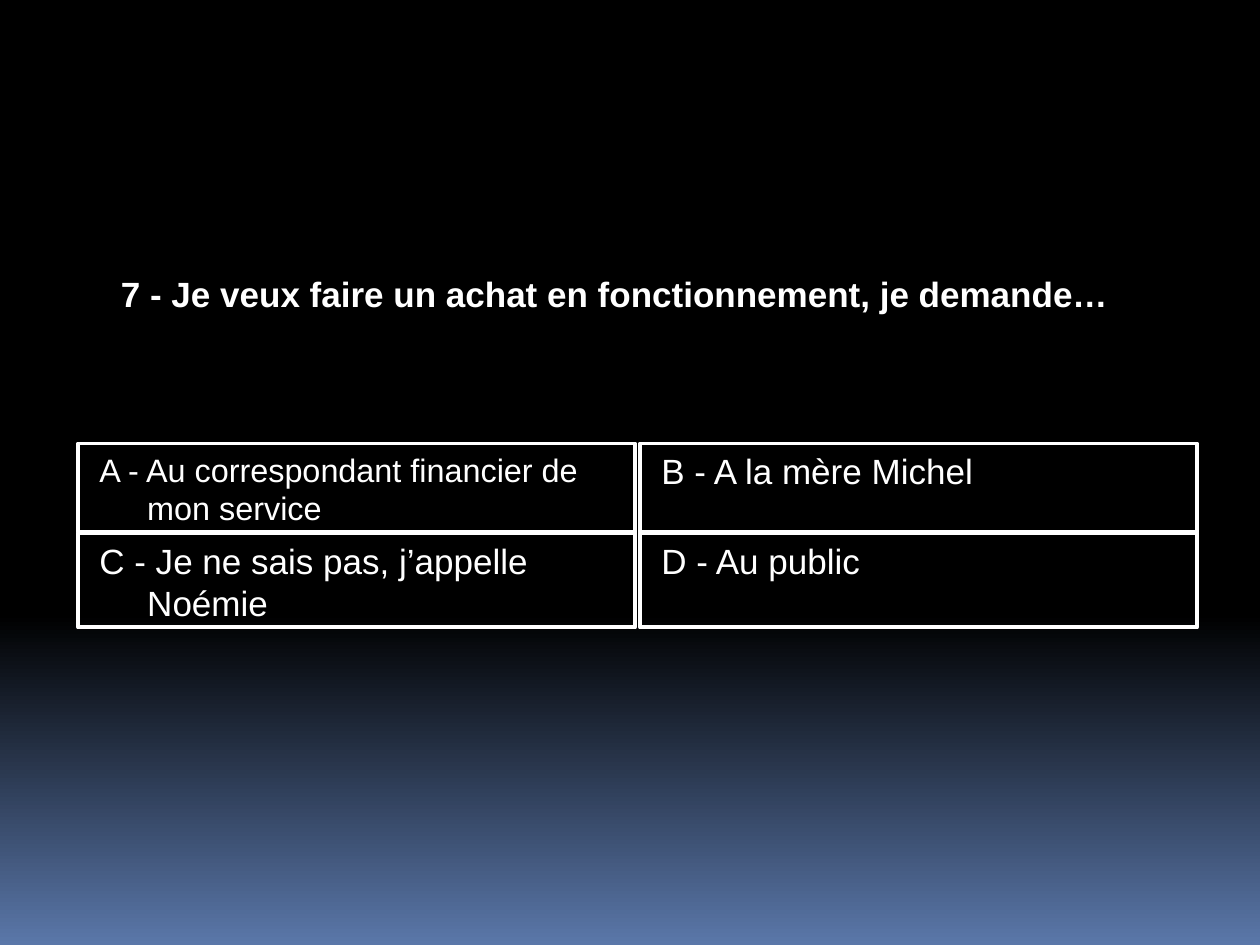
from pptx import Presentation
from pptx.dml.color import RGBColor
from pptx.enum.shapes import MSO_SHAPE
from pptx.enum.text import MSO_ANCHOR, MSO_AUTO_SIZE, PP_ALIGN
from pptx.util import Pt

RECTANGLE = MSO_SHAPE.RECTANGLE
TOP = MSO_ANCHOR.TOP
LEFT = PP_ALIGN.LEFT
NO_AUTOFIT = MSO_AUTO_SIZE.NONE

QUESTION = "7 - Je veux faire un achat en fonctionnement, je demande…"
ANSWERS = [  # rows of (text, font size)
    [("A - Au correspondant financier de mon service", 18.5),
     ("B - A la mère Michel", 20)],
    [("C - Je ne sais pas, j’appelle Noémie", 20),
     ("D - Au public", 20)],
]

COLOURS = {"night": "000000", "horizon": "5A77A9", "white": "FFFFFF"}
FONT = "Arial"
GRID_LEFT, GRID_TOP = 44.64, 253.44
ANSWER_WIDTH, COLUMN_GAP = 318.24, 2.88
ROW_HEIGHTS, ROW_GAP = [50.4, 54], 0.72


def colour(name):
    return RGBColor.from_string(COLOURS[name])


def write(shape, text, size=20, bold=False, hanging=False):
    frame = shape.text_frame
    frame.word_wrap = True
    frame.auto_size = NO_AUTOFIT
    frame.vertical_anchor = TOP
    para = frame.paragraphs[0]
    para.alignment = LEFT
    if hanging:
        para.space_before = Pt(7)
        properties = para._p.get_or_add_pPr()
        properties.set("marL", str(Pt(32.4)))
        properties.set("indent", str(Pt(-27.36)))
    span = para.add_run()
    span.text = text
    span.font.name = FONT
    span.font.size = Pt(size)
    span.font.bold = bold
    span.font.color.rgb = colour("white")


def paint_background(page):
    fill = page.background.fill
    fill.gradient()
    fill.gradient_angle = 270
    for stop, position, name in zip(fill.gradient_stops, (0.65, 1), ("night", "horizon")):
        stop.position = position
        stop.color.rgb = colour(name)


def add_answer(page, left, top, height, text, size):
    box = page.shapes.add_shape(
        RECTANGLE, Pt(left), Pt(top), Pt(ANSWER_WIDTH), Pt(height))
    box.shadow.inherit = False
    box.fill.background()
    box.line.color.rgb = colour("white")
    box.line.width = Pt(2.25)
    write(box, text, size=size, hanging=True)


def main():
    deck = Presentation()
    deck.slide_width, deck.slide_height = Pt(720), Pt(540)
    page = deck.slides.add_slide(deck.slide_layouts.get_by_name("Title Only"))
    paint_background(page)

    title = page.shapes.title
    title.left, title.top = Pt(61.92), Pt(151.92)
    title.width, title.height = Pt(612), Pt(61.2)
    write(title, QUESTION, bold=True)

    top = GRID_TOP
    for answers, height in zip(ANSWERS, ROW_HEIGHTS):
        for column, (text, size) in enumerate(answers):
            left = GRID_LEFT + column * (ANSWER_WIDTH + COLUMN_GAP)
            add_answer(page, left, top, height, text, size)
        top += height + ROW_GAP

    deck.save("out.pptx")


if __name__ == "__main__":
    main()
